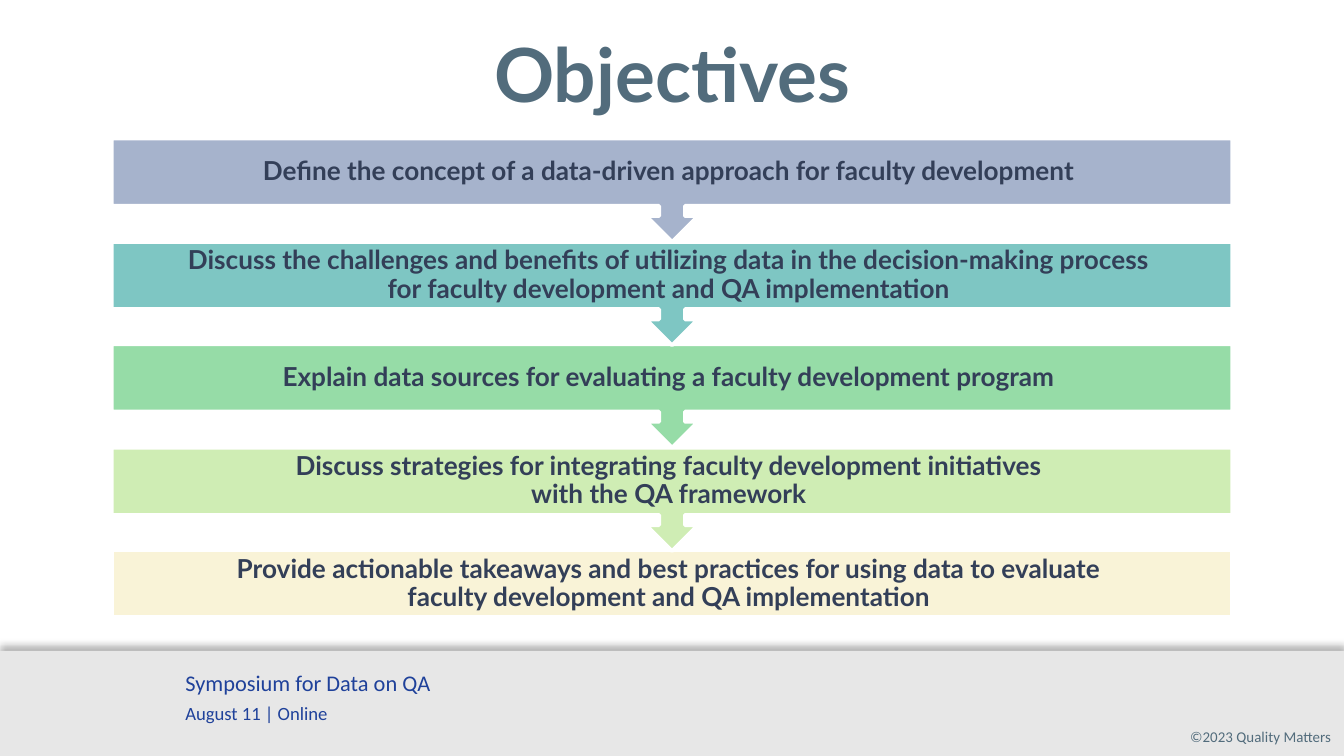
from copy import deepcopy

from lxml import etree
from pptx import Presentation
from pptx.dml.color import RGBColor
from pptx.enum.shapes import MSO_SHAPE
from pptx.enum.text import MSO_ANCHOR, MSO_AUTO_SIZE, PP_ALIGN
from pptx.oxml.ns import qn
from pptx.util import Pt

PX = 5715  # 160 px to the inch
RECT, CALLOUT = MSO_SHAPE.RECTANGLE, MSO_SHAPE.UP_ARROW_CALLOUT
TOP, MIDDLE = MSO_ANCHOR.TOP, MSO_ANCHOR.MIDDLE
LEFT, CENTER, RIGHT = PP_ALIGN.LEFT, PP_ALIGN.CENTER, PP_ALIGN.RIGHT

WHITE = RGBColor(0xFF, 0xFF, 0xFF)
GRAY = RGBColor(0xE7, 0xE7, 0xE7)
SLATE = RGBColor(0x52, 0x6C, 0x7C)
BLUE = RGBColor(0x1F, 0x41, 0x9A)
NAVY = RGBColor(0x33, 0x3F, 0x58)

STEPS = [
    (RGBColor(0xA6, 0xB3, 0xCC),
     "Define the concept of a data-driven approach for faculty development "),
    (RGBColor(0x7E, 0xC6, 0xC3),
     "Discuss the challenges and benefits of utilizing data in the decision-making process \n"
     "for faculty development and QA implementation "),
    (RGBColor(0x96, 0xDC, 0xA7),
     "Explain data sources for evaluating a faculty development program "),
    (RGBColor(0xCF, 0xED, 0xB4),
     "Discuss strategies for integrating faculty development initiatives \n"
     "with the QA framework "),
    (RGBColor(0xF9, 0xF3, 0xD7),
     "Provide actionable takeaways and best practices for using data to evaluate \n"
     "faculty development and QA implementation "),
]


def add_block(kind, box, fill):
    block = slide.shapes.add_shape(kind, *[n * PX for n in box])
    block.shadow.inherit = False
    block.fill.solid()
    block.fill.fore_color.rgb = fill
    return block


def set_text(shape, box, lines, color, align, anchor, pads, font, gaps):
    """Place a text shape and fill it; lines holds (text, size) pairs."""
    shape.left, shape.top, shape.width, shape.height = [n * PX for n in box]
    frame = shape.text_frame
    frame.word_wrap = True
    frame.auto_size = MSO_AUTO_SIZE.NONE
    frame.vertical_anchor = anchor
    for side, pad in zip(("left", "top", "right", "bottom"), pads):
        setattr(frame, "margin_" + side, pad * PX)
    for i, (text, size) in enumerate(lines):
        para = frame.add_paragraph() if i else frame.paragraphs[0]
        para.text = text
        para.alignment = align
        for key, value in gaps.items():
            setattr(para, key, value)
        if i:
            para.space_before = Pt(3)
        for run in para.runs:
            for key, value in font.items():
                setattr(run.font, key, value)
            run.font.size = Pt(size)
            run.font.color.rgb = color
        # A line break takes the format of its text, to keep the line height
        for br in para._p.findall(qn("a:br")):
            br.insert(0, deepcopy(para.runs[0]._r.rPr))


prs = Presentation()
prs.slide_width, prs.slide_height = 1600 * PX, 900 * PX
slide = prs.slides.add_slide(prs.slide_layouts[5])

LATO = {"name": "Lato", "bold": True}
CALIBRI = {"name": "Calibri", "bold": False}

# Footer
bar = add_block(RECT, (0, 775, 1600, 125), GRAY)
bar.line.fill.background()
effects = bar._element.spPr.find(qn("a:effectLst"))
shade = etree.SubElement(effects, qn("a:outerShdw"), blurRad=str(Pt(4)),
                         dist=str(Pt(3)), dir="16200000", rotWithShape="0")
black = etree.SubElement(shade, qn("a:srgbClr"), val="000000")
etree.SubElement(black, qn("a:alpha"), val="29000")

NOTES = [
    ((1331, 858, 254, 38), [("©2023 Quality Matters", 8)], SLATE, RIGHT, (16, 8, 0, 8)),
    ((205, 789, 1022, 82), [("Symposium for Data on QA", 12), ("August 11 | Online", 10)],
     BLUE, LEFT, (16, 8, 16, 8)),
]
for box, lines, color, align, pads in NOTES:
    note = slide.shapes.add_textbox(0, 0, 0, 0)
    set_text(note, box, lines, color, align, TOP, pads, CALIBRI, {})

# Title
set_text(slide.shapes.title, (0, 38, 1600, 96), [("Objectives", 40)], SLATE,
         CENTER, MIDDLE, (16, 8, 16, 8), LATO, {})

# Steps, from the bottom up so that each arrow lies over the next step
last = len(STEPS) - 1
for i, (fill, text) in reversed(list(enumerate(STEPS))):
    top = 165 + round(i * 122.6)
    kind, high = (RECT, 80) if i == last else (CALLOUT, 123)
    step = add_block(kind, (133, top, 1334, high), fill)
    step.line.color.rgb = WHITE
    step.line.width = Pt(2)
    if kind == CALLOUT:
        step.rotation = 180
    label = slide.shapes.add_textbox(0, 0, 0, 0)
    set_text(label, (133, top, 1334, 80), [(text, 14)], NAVY, CENTER, MIDDLE,
             (18, 18, 18, 18), LATO, {"line_spacing": 0.9, "space_after": Pt(5)})

prs.save("out.pptx")
